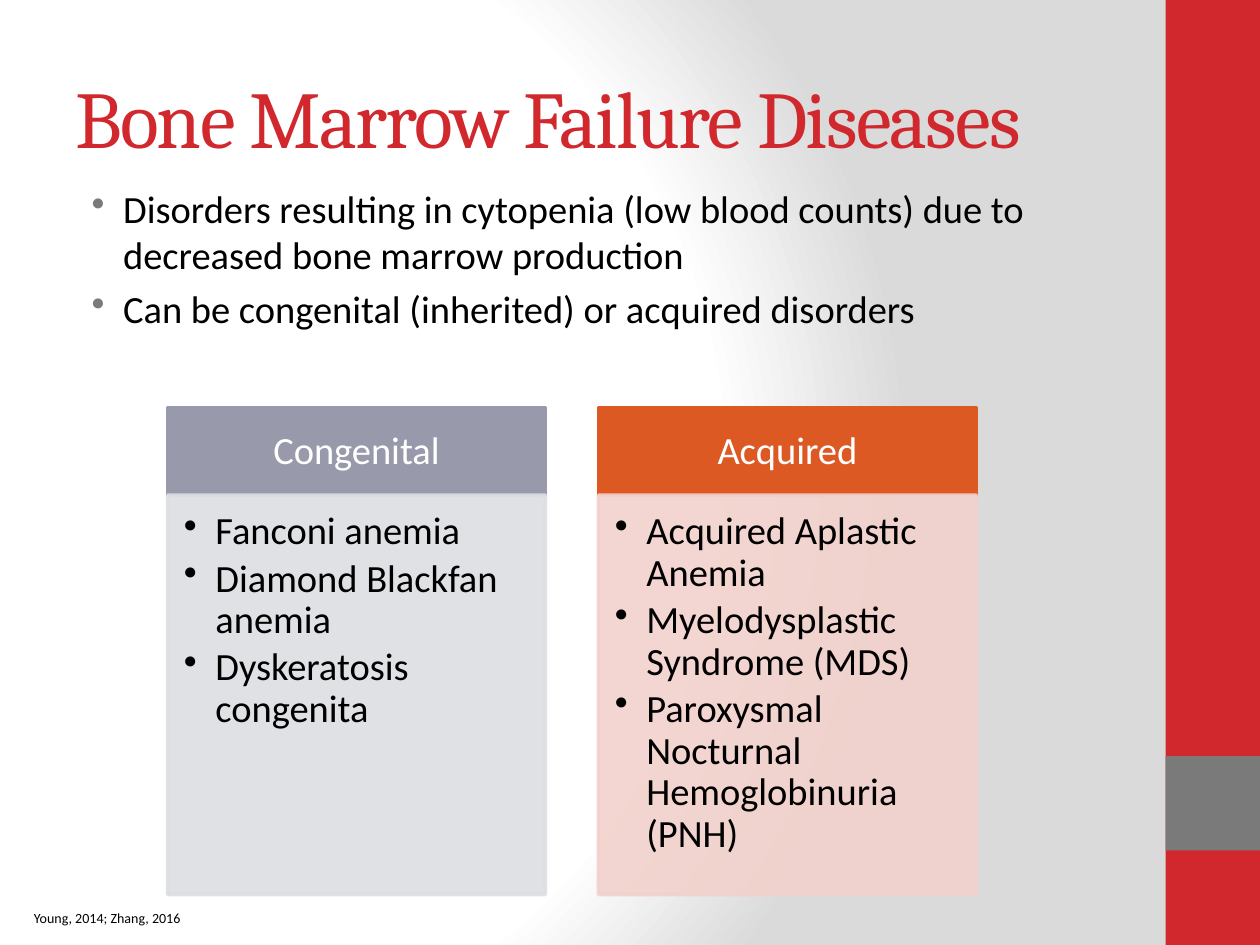
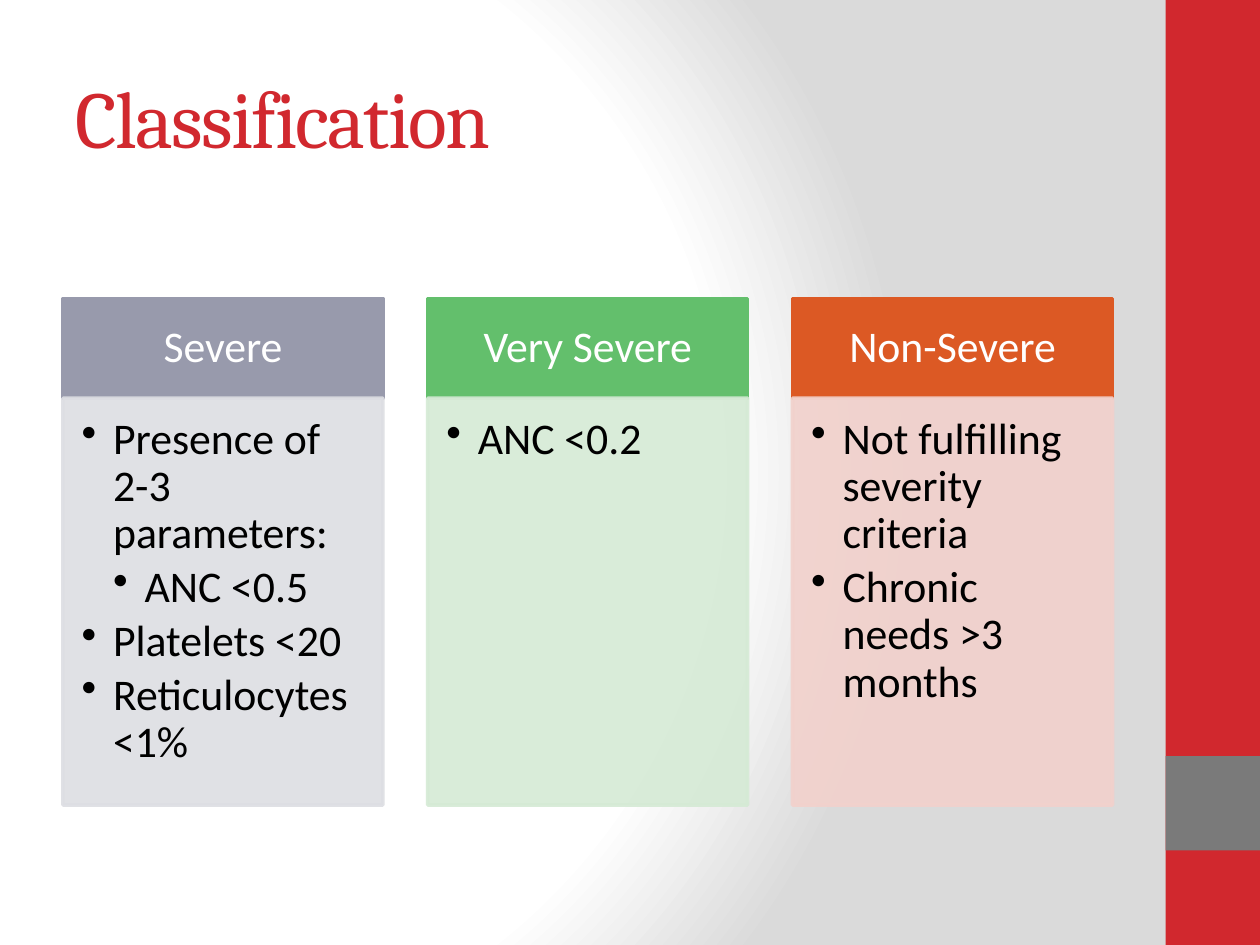
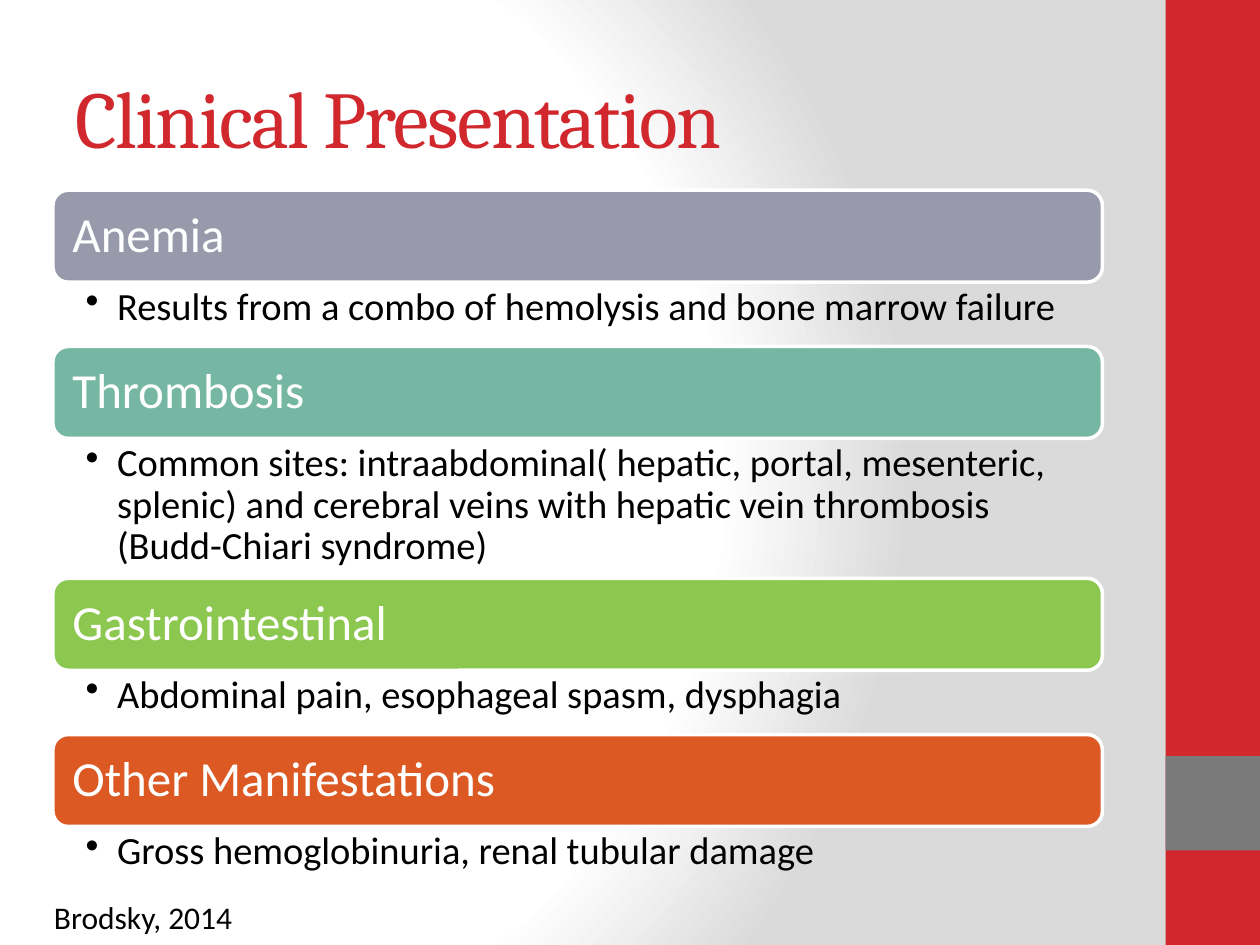
from lxml.etree import SubElement
from pptx import Presentation
from pptx.dml.color import RGBColor
from pptx.enum.shapes import MSO_SHAPE as Kind
from pptx.enum.text import MSO_ANCHOR as Anchor, PP_ALIGN as Align
from pptx.oxml import parse_xml
from pptx.oxml.ns import nsdecls, qn
from pptx.util import Inches, Pt

RED, GRAY, WHITE, BLACK = "D1282E", "7A7A7A", "FFFFFF", "000000"
SLATE, GREEN, ORANGE = "989AAC", "63BF6C", "DC5924"
TEAL, LIME = "76B7A3", "8CC74F"
TINT = {SLATE: "DDDEE3", GREEN: "D5EAD5", ORANGE: "F2D1CC"}


def paint(fill, color):
    fill.solid()
    fill.fore_color.rgb = RGBColor.from_string(color)


def write(shape, rows, size, color=BLACK, font="Calibri", pads=(0.1, 0.05, 0.1, 0.05),
          anchor=Anchor.TOP, align=Align.LEFT, line=1, before=0, after=0,
          bullet=None, base=0.25):
    frame = shape.text_frame
    frame.word_wrap = True
    frame.vertical_anchor = anchor
    frame.margin_left, frame.margin_top, frame.margin_right, frame.margin_bottom = map(Inches, pads)
    for i, row in enumerate(rows):
        para = frame.add_paragraph() if i else frame.paragraphs[0]
        nested = isinstance(row, tuple)
        para.text = row[0] if nested else row
        para.alignment = align
        para.line_spacing = line
        para.space_before = Pt(size * before)
        para.space_after = Pt(size * after)
        run = para.runs[0]
        run.font.name = font
        run.font.size = Pt(size)
        paint(run.font.fill, color)
        if bullet:
            props = para._p.get_or_add_pPr()
            props.set("marL", str(Inches(base + 0.25 * nested)))
            props.set("indent", str(Inches(-0.25)))
            tone = SubElement(props, qn("a:buClr"))
            SubElement(tone, qn("a:srgbClr"), val=bullet)
            SubElement(props, qn("a:buChar"), char="•")


deck = Presentation()
deck.slide_width, deck.slide_height = Inches(10), Inches(7.5)

master = deck.slide_master
master.background.fill.solid()
back = master.element.find(".//" + qn("p:bgPr"))
stops = "".join(f'<a:gs pos="{pos}000"><a:srgbClr val="{tone}"/></a:gs>'
                for pos, tone in ((0, WHITE), (75, WHITE), (100, "DADADA")))
back.replace(back[0], parse_xml(
    f'<a:gradFill {nsdecls("a")} rotWithShape="1"><a:gsLst>{stops}</a:gsLst>'
    '<a:path path="circle"><a:fillToRect l="20000" t="50000" r="100000" b="50000"/>'
    '</a:path></a:gradFill>'))

slides = []
for title in ("Bone Marrow Failure Diseases", "Classification", "Clinical Presentation"):
    slide = deck.slides.add_slide(deck.slide_layouts[6])
    for top, high, color in ((0, 7.5, RED), (6, 0.75, GRAY)):
        band = slide.shapes.add_shape(Kind.RECTANGLE, Inches(9.25), Inches(top), Inches(0.75), Inches(high))
        band.shadow.inherit = False
        paint(band.fill, color)
        band.line.fill.background()
    box = slide.shapes.add_textbox(Inches(0.5), Inches(0.3), Inches(8.33), Inches(1.25))
    write(box, [title], 46, RED, "Cambria", anchor=Anchor.MIDDLE)
    box.text_frame.paragraphs[0].runs[0].font._element.set("spc", "-100")
    slides.append(slide)

causes, grades, signs = slides

intro = causes.shapes.add_textbox(Inches(0.5), Inches(1.42), Inches(8.33), Inches(1.5))
write(intro, [
    "Disorders resulting in cytopenia (low blood counts) due to decreased bone marrow production",
    "Can be congenital (inherited) or acquired disorders",
], 22, before=0.2, bullet=GRAY, base=0.38)

groups = [
    (causes, 22, (1.33, 3.24), 3, 3.42, (0.69, 3.17), [
        ("Congenital", SLATE, ["Fanconi anemia", "Diamond Blackfan anemia", "Dyskeratosis congenita"]),
        ("Acquired", ORANGE, ["Acquired Aplastic Anemia", "Myelodysplastic Syndrome (MDS)",
                              "Paroxysmal Nocturnal Hemoglobinuria (PNH)"]),
    ]),
    (grades, 25, (0.5, 2.37), 2.54, 2.895, (0.79, 3.23), [
        ("Severe", SLATE, ["Presence of 2-3 parameters:", ("ANC <0.5",), "Platelets <20",
                           "Reticulocytes <1%"]),
        ("Very Severe", GREEN, ["ANC <0.2"]),
        ("Non-Severe", ORANGE, ["Not fulfilling severity criteria", "Chronic needs >3 months"]),
    ]),
]
for slide, size, (left, top), wide, step, (head, body), cards in groups:
    side = size / 130
    for i, (name, color, items) in enumerate(cards):
        parts = []
        for y, high, tone in ((top, head, color), (top + head, body, TINT[color])):
            part = slide.shapes.add_shape(Kind.RECTANGLE, Inches(left + i * step), Inches(y),
                                          Inches(wide), Inches(high))
            part.shadow.inherit = False
            paint(part.fill, tone)
            paint(part.line.fill, tone)
            part.line.width = Pt(2)
            parts.append(part)
        label, panel = parts
        for tone in panel.element.spPr.iter(qn("a:srgbClr")):
            SubElement(tone, qn("a:alpha"), val="90000")
        write(label, [name], size, WHITE, pads=(side, 0.6 * side, side, 0.6 * side),
              anchor=Anchor.MIDDLE, align=Align.CENTER, line=0.9)
        write(panel, items, size, pads=(0.77 * side, 0.77 * side, side, 1.14 * side),
              line=0.9, after=0.15, bullet=BLACK)

topics = [
    ("Anemia", SLATE, 0.51, "Results from a combo of hemolysis and bone marrow failure"),
    ("Thrombosis", TEAL, 1.11, "Common sites: intraabdominal( hepatic, portal, mesenteric, splenic) and "
     "cerebral veins with hepatic vein thrombosis (Budd-Chiari syndrome)"),
    ("Gastrointestinal", LIME, 0.51, "Abdominal pain, esophageal spasm, dysphagia"),
    ("Other Manifestations", ORANGE, 0.51, "Gross hemoglobinuria, renal tubular damage"),
]
top = 1.51
for name, color, high, note in topics:
    bar = signs.shapes.add_shape(Kind.ROUNDED_RECTANGLE, Inches(0.42), Inches(top), Inches(8.33), Inches(0.73))
    bar.shadow.inherit = False
    paint(bar.fill, color)
    paint(bar.line.fill, WHITE)
    bar.line.width = Pt(2)
    write(bar, [name], 28, WHITE, pads=(0.12, 0.12, 0.12, 0.12), anchor=Anchor.MIDDLE, line=0.9)
    box = signs.shapes.add_textbox(Inches(0.42), Inches(top + 0.73), Inches(8.33), Inches(high))
    write(box, [note], 22, pads=(0.26, 0.04, 0.22, 0.04), line=0.9, after=0.2, bullet=BLACK)
    top += 0.73 + high

for slide, cite, size, (left, top, wide, high) in (
    (causes, "Young, 2014; Zhang, 2016", 8, (0.17, 7.17, 2.08, 0.24)),
    (signs, "Brodsky, 2014", 18, (0.33, 7.08, 2.58, 0.4)),
):
    box = slide.shapes.add_textbox(Inches(left), Inches(top), Inches(wide), Inches(high))
    write(box, [cite], size)

deck.save("out.pptx")
